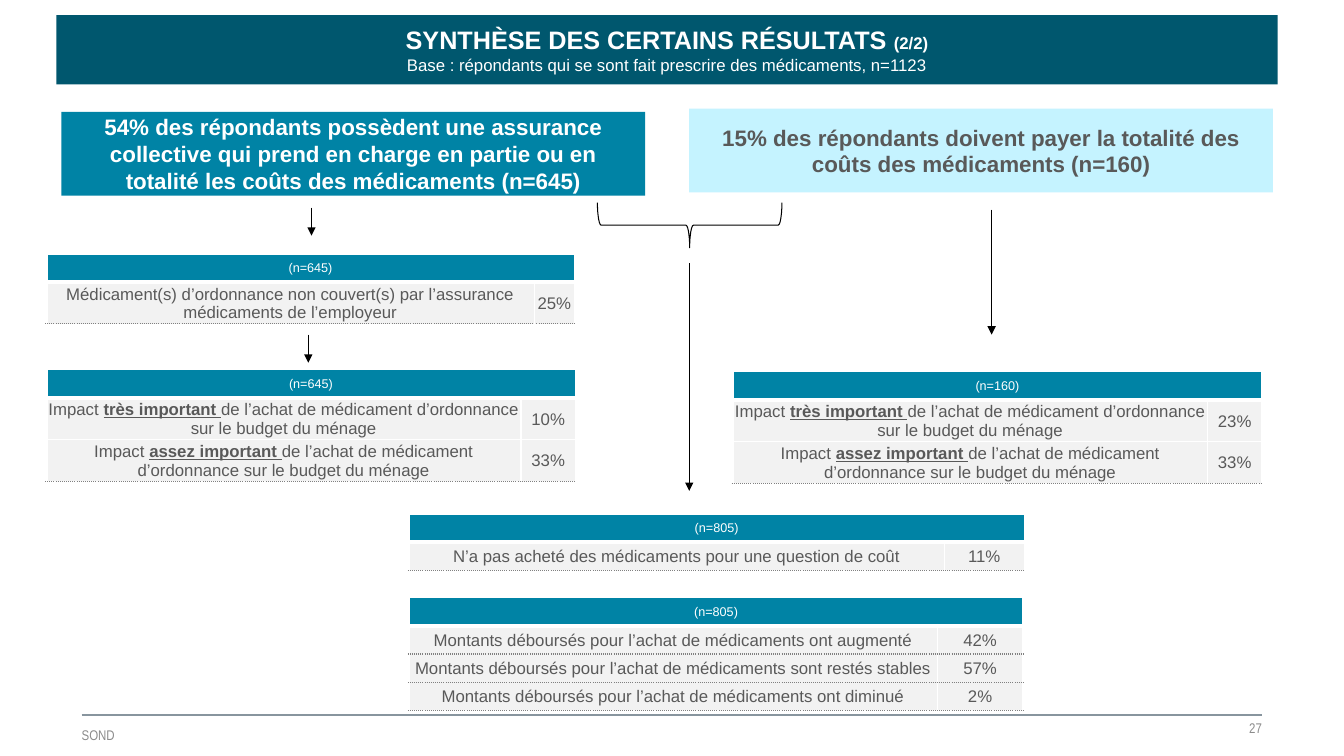
from dataclasses import dataclass

from pptx import Presentation
from pptx.dml.color import RGBColor as Rgb
from pptx.enum.shapes import MSO_CONNECTOR as Link, MSO_SHAPE as Preset
from pptx.enum.text import MSO_ANCHOR as Anchor, PP_ALIGN as Align
from pptx.oxml import parse_xml
from pptx.oxml.ns import nsdecls
from pptx.util import Cm, Pt


@dataclass(frozen=True)
class Theme:
    body: str = "Arial"
    narrow: str = "Arial Narrow"
    navy: str = "00576E"
    teal: str = "0083A5"
    pale: str = "C5F3FF"
    row: str = "F2F2F2"
    ink: str = "595959"
    footer: str = "8C8C8C"
    rule: str = "88959E"
    dots: str = "808080"
    white: str = "FFFFFF"
    black: str = "000000"
    title_size: int = 18
    claim_size: int = 16
    text_size: int = 12
    note_size: int = 10
    head_size: int = 9


def assign(target, values):
    for name, value in values.items():
        setattr(target, name, value)


def margins(*sides):
    names = ("margin_left", "margin_top", "margin_right", "margin_bottom")
    return dict(zip(names, map(Cm, sides)))


class Page:
    def __init__(self, deck, theme):
        self.theme = theme
        self.shapes = deck.slides.add_slide(deck.slide_layouts[6]).shapes

    def typeset(self, para, spans, size, color, align=Align.CENTER, font=None, **base):
        para.alignment = align
        for text, changes in spans:
            if text == "\n":
                para.add_line_break()
                continue
            span = para.add_run()
            span.text = text
            look = {"name": font or self.theme.body, "size": Pt(size), **base, **changes}
            assign(span.font, look)
            span.font.color.rgb = Rgb.from_string(color)

    def line(self, start, end, color, width, arrow=False):
        link = self.shapes.add_connector(Link.STRAIGHT, *map(Cm, start + end))
        link.line.color.rgb = Rgb.from_string(color)
        link.line.width = Pt(width)
        if arrow:
            tip = f'<a:tailEnd {nsdecls("a")} type="triangle"/>'
            link.line._get_or_add_ln().append(parse_xml(tip))
        link._element.spPr.append(parse_xml(f'<a:effectLst {nsdecls("a")}/>'))

    def arrow(self, x, top, bottom):
        self.line((x, top), (x, bottom), self.theme.black, 0.75, arrow=True)

    def brace(self, *place):
        box = self.shapes.add_shape(Preset.RIGHT_BRACE, *map(Cm, place))
        box.shadow.inherit = False
        box.rotation = 90
        box.fill.background()
        box.line.color.rgb = Rgb.from_string(self.theme.black)
        box.line.width = Pt(0.75)

    def banner(self, place, fill, spans, size, color, inset):
        box = self.shapes.add_shape(Preset.RECTANGLE, *map(Cm, place))
        box.shadow.inherit = False
        box.fill.solid()
        box.fill.fore_color.rgb = Rgb.from_string(fill)
        box.line.fill.background()
        frame = box.text_frame
        assign(frame, {"word_wrap": True, "vertical_anchor": Anchor.MIDDLE, **inset})
        self.typeset(frame.paragraphs[0], spans, size, color, bold=True)

    def note(self, place, text, align):
        frame = self.shapes.add_textbox(*map(Cm, place)).text_frame
        inset = margins(0, 0, 0, 0)
        assign(frame, {"word_wrap": True, "vertical_anchor": Anchor.MIDDLE, **inset})
        theme = self.theme
        self.typeset(frame.paragraphs[0], [(text, {})], theme.note_size, theme.footer,
                     align, theme.narrow)

    def paint(self, cell, fill, edges):
        cell.fill.solid()
        cell.fill.fore_color.rgb = Rgb.from_string(fill)
        for place, (side, (color, width, dash)) in enumerate(edges.items()):
            edge = parse_xml(
                f'<a:ln{side} {nsdecls("a")} w="{Pt(width)}"><a:solidFill>'
                f'<a:srgbClr val="{color}"/></a:solidFill>'
                f'<a:prstDash val="{dash}"/></a:ln{side}>')
            cell._tc.get_or_add_tcPr().insert(place, edge)

    def table(self, left, top, widths, base, rows, divider):
        theme, height = self.theme, 0.71
        count = len(rows) + 1
        size = (sum(widths), height * count)
        grid = self.shapes.add_table(count, 2, *map(Cm, (left, top, *size))).table
        assign(grid, {"first_row": False, "horz_banding": False})
        for column, width in zip(grid.columns, widths):
            column.width = Cm(width)
        for row in grid.rows:
            row.height = Cm(height)

        white = (theme.white, 1, "solid")
        dotted = (theme.dots, 1, "sysDot")
        left_edge = {"L": (theme.white, 2.25, "solid")}
        head = grid.cell(0, 0)
        head.merge(grid.cell(0, 1))
        for column in range(2):
            self.paint(grid.cell(0, column), theme.teal,
                       {**left_edge, "T": white, "B": (theme.white, 3, "solid")})
        head.vertical_anchor = Anchor.MIDDLE
        self.typeset(head.text_frame.paragraphs[0], [(base, {})], theme.head_size, theme.white)

        inner = dotted if divider == "dotted" else white
        for number, (label, share) in enumerate(rows, 1):
            above = white if number == 1 else inner
            below = dotted if number == len(rows) else inner
            for column, spans in enumerate((label, [(share, {})])):
                cell = grid.cell(number, column)
                sides = left_edge if column == 0 else {}
                self.paint(cell, theme.row, {**sides, "T": above, "B": below})
                inset = margins(0.03, 0.03, 0.03, 0)
                assign(cell, {"vertical_anchor": Anchor.MIDDLE, **inset})
                self.typeset(cell.text_frame.paragraphs[0], spans, theme.text_size, theme.ink)


def plain(text):
    return [(text, {})]


def impact(degree):
    return [("Impact ", {}),
            (f"{degree} important ", {"bold": True, "underline": True}),
            ("de l’achat de médicament d’ordonnance sur le budget du ménage", {})]


def main():
    deck = Presentation()
    assign(deck, {"slide_width": Cm(33.87), "slide_height": Cm(19.05)})
    theme = Theme()
    page = Page(deck, theme)

    page.line((2.06, 18.01), (31.8, 18.01), theme.rule, 1.5)
    page.note((22.17, 18.01, 9.63, 0.66), "27", Align.RIGHT)
    page.note((2.06, 18.19, 9.47, 0.66), "SOND", Align.LEFT)

    small = {"size": Pt(theme.text_size)}
    title = [("SYNTHÈSE DES CERTAINS RÉSULTATS ", {}), ("(2/2)", small), ("\n", {}),
             ("Base : répondants qui se sont fait prescrire des médicaments, n=1123",
              {**small, "bold": False})]
    page.banner((1.42, 0.38, 30.78, 1.75), theme.navy, title, theme.title_size,
                theme.white, margins(0, 0, 0, 0))
    claims = (
        (1.55, 2.82, theme.teal, theme.white,
         "54% des répondants possèdent une assurance collective qui prend en charge "
         "en partie ou en totalité les coûts des médicaments (n=645)"),
        (17.37, 2.74, theme.pale, theme.ink,
         "15% des répondants doivent payer la totalité des coûts des médicaments (n=160)"),
    )
    for left, top, fill, color, text in claims:
        page.banner((left, top, 14.71, 2.11), fill, plain(text), theme.claim_size,
                    color, margins(0.25, 0.13, 0.25, 0.13))

    page.brace(16.81, 3.35, 1.14, 4.65)
    for arrow in ((7.85, 5.23, 5.94), (7.77, 8.43, 9.14),
                  (17.37, 6.63, 12.37), (24.99, 5.28, 8.43)):
        page.arrow(*arrow)

    page.table(1.17, 6.4, (12.29, 1.02), "(n=645)", [
        (plain("Médicament(s) d’ordonnance non couvert(s) par l’assurance "
               "médicaments de l’employeur"), "25%")], "white")
    for left, top, base, strong in ((1.17, 9.32, "(n=645)", "10%"),
                                    (18.47, 9.37, "(n=160)", "23%")):
        rows = [(impact("très"), strong), (impact("assez"), "33%")]
        page.table(left, top, (11.96, 1.37), base, rows, "white")
    page.table(10.31, 12.95, (13.49, 2.01), "(n=805)", [
        (plain("N’a pas acheté des médicaments pour une question de coût"), "11%")], "dotted")
    trends = (("ont augmenté", "42%"), ("sont restés stables", "57%"), ("ont diminué", "2%"))
    page.table(10.31, 15.06, (13.31, 2.16), "(n=805)", [
        (plain(f"Montants déboursés pour l’achat de médicaments {trend}"), share)
        for trend, share in trends], "dotted")

    deck.save("out.pptx")


if __name__ == "__main__":
    main()
